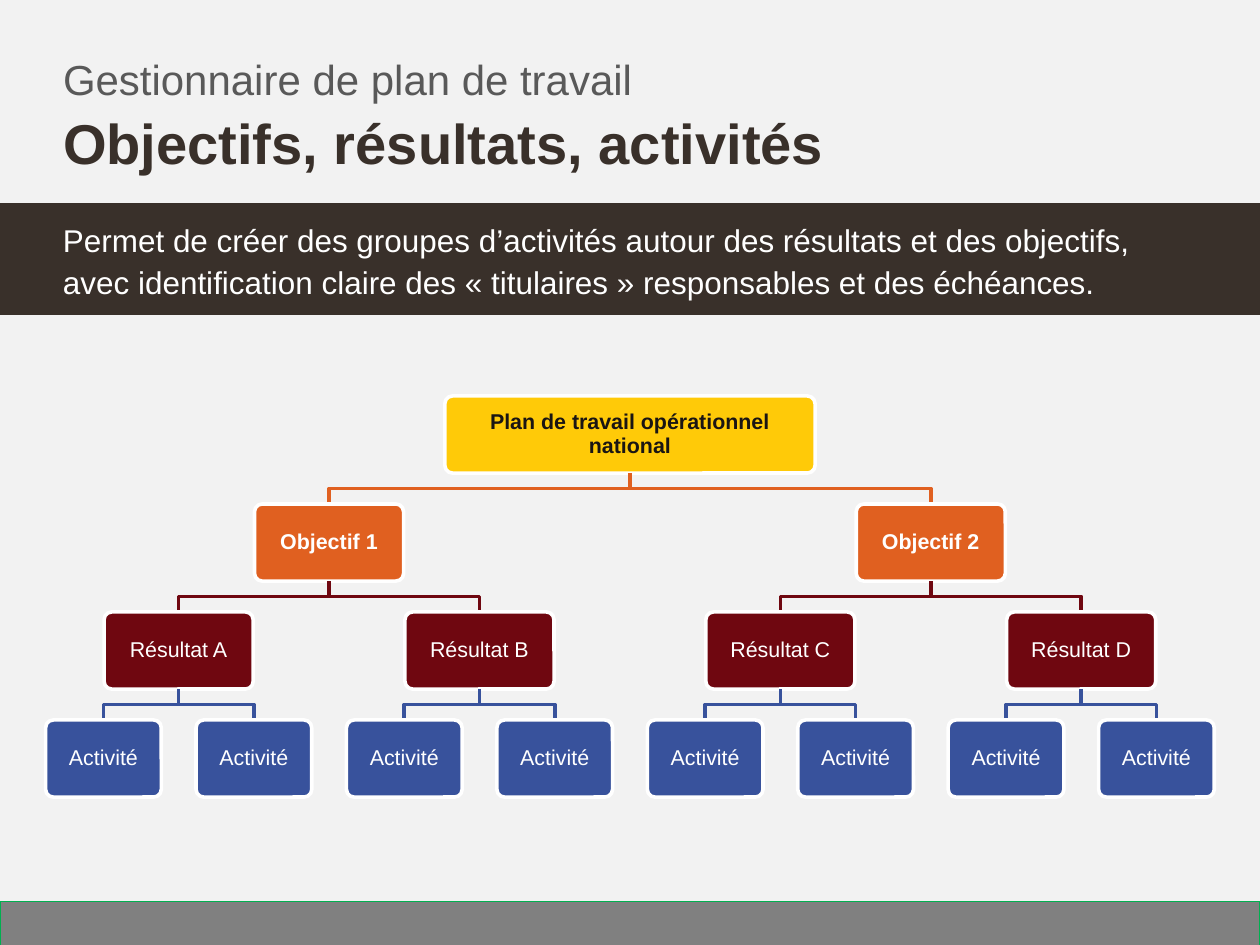
from dataclasses import dataclass
from pptx import Presentation
from pptx import util as u
from pptx.dml.color import RGBColor
from pptx.enum import shapes, text

HUES = {
    "page": "F2F2F2", "dark": "39302A", "grey": "595959", "foot": "808080",
    "green": "00B050", "gold": "FFCA08", "ink": "1A1513", "orange": "E06020",
    "red": "6F0710", "blue": "38529C", "white": "FFFFFF",
}
FONT = "Arial"
MID, SPAN = 4.9, 9.36
TOP, HIGH, STEP = 3.08, 0.6, 0.84


@dataclass
class Level:
    names: list[str]
    width: float
    fill: str
    ink: str = "white"
    bold: bool = False


LEVELS = [
    Level(["Plan de travail opérationnel national"], 2.88, "gold", "ink", True),
    Level(["Objectif 1", "Objectif 2"], 1.16, "orange", bold=True),
    Level([f"Résultat {mark}" for mark in "ABCD"], 1.16, "red"),
    Level(["Activité"] * 8, 0.9, "blue"),
]


def hue(name: str) -> RGBColor:
    return RGBColor.from_string(HUES[name])


def write(shape, words: str, size: float, ink: str, bold: bool = False, inset: float = 0):
    frame = shape.text_frame
    frame.word_wrap = True
    frame.auto_size = text.MSO_AUTO_SIZE.NONE
    frame.margin_left = frame.margin_right = u.Inches(inset)
    frame.margin_top = frame.margin_bottom = u.Inches(inset)
    frame.text = words
    para = frame.paragraphs[0]
    para.alignment = text.PP_ALIGN.LEFT
    font = para.runs[0].font
    font.name, font.size, font.bold = FONT, u.Pt(size), bold
    font.color.rgb = hue(ink)
    return para


def label(slide, box: tuple, words: str, size: float, ink: str):
    return write(slide.shapes.add_textbox(*map(u.Inches, box)), words, size, ink)


def block(slide, kind, box: tuple, fill: str, edge: str = "", weight: float = 0):
    shape = slide.shapes.add_shape(kind, *map(u.Inches, box))
    shape.shadow.inherit = False
    shape.fill.solid()
    shape.fill.fore_color.rgb = hue(fill)
    if edge:
        shape.line.color.rgb = hue(edge)
        shape.line.width = u.Pt(weight)
    else:
        shape.line.fill.background()
    return shape


def centre(index: int, count: int) -> float:
    return MID + (index - (count - 1) / 2) * SPAN / count


def link(slide, start: float, end: float, top: float, tone: str) -> None:
    foot = top - STEP + HIGH
    bend = (foot + top) / 2
    pen = slide.shapes.build_freeform(u.Inches(start), u.Inches(foot))
    turns = [(start, bend), (end, bend), (end, top)]
    pen.add_line_segments([(u.Inches(x), u.Inches(y)) for x, y in turns], close=False)
    path = pen.convert_to_shape()
    path.shadow.inherit = False
    path.fill.background()
    path.line.color.rgb = hue(tone)
    path.line.width = u.Pt(2)


def node(slide, level: Level, words: str, mid: float, top: float) -> None:
    box = (mid - level.width / 2, top, level.width, HIGH)
    shape = block(slide, shapes.MSO_SHAPE.ROUNDED_RECTANGLE, box, level.fill, "white", 2)
    shape.adjustments[0] = 0.1
    para = write(shape, words, 12, level.ink, level.bold, 0.07)
    para.alignment = text.PP_ALIGN.CENTER
    para.line_spacing = 0.9
    shape.text_frame.vertical_anchor = text.MSO_ANCHOR.MIDDLE


def tree(slide) -> None:
    for depth, level in enumerate(LEVELS):
        count = len(level.names)
        top = TOP + depth * STEP
        for index, words in enumerate(level.names):
            mid = centre(index, count)
            if depth:
                link(slide, centre(index // 2, count // 2), mid, top, level.fill)
            node(slide, level, words, mid, top)


def main() -> None:
    deck = Presentation()
    deck.slide_width, deck.slide_height = u.Inches(9.8), u.Inches(7.35)
    slide = deck.slides.add_slide(deck.slide_layouts[5])
    slide.background.fill.solid()
    slide.background.fill.fore_color.rgb = hue("page")

    rect = shapes.MSO_SHAPE.RECTANGLE
    block(slide, rect, (0, 7.01, 9.8, 0.37), "foot", "green", 0.75)

    title = slide.shapes.title
    title.left, title.top = u.Inches(0.49), u.Inches(0.84)
    title.width, title.height = u.Inches(8.82), u.Inches(0.53)
    write(title, "Objectifs, résultats, activités", 31.4, "dark", True)
    title.text_frame.vertical_anchor = text.MSO_ANCHOR.BOTTOM

    head = label(slide, (0.49, 0.46, 8.82, 0.36), "Gestionnaire de plan de travail", 23.5, "grey")
    head.line_spacing = 0.9

    block(slide, rect, (0, 1.58, 9.8, 0.87), "dark")
    intro = label(
        slide, (0.49, 1.69, 8.6, 0.65),
        "Permet de créer des groupes d’activités autour des résultats et des objectifs, "
        "avec identification claire des « titulaires » responsables et des échéances.",
        17.6, "white")
    intro.line_spacing = u.Pt(23.5)

    tree(slide)
    deck.save("out.pptx")


if __name__ == "__main__":
    main()
